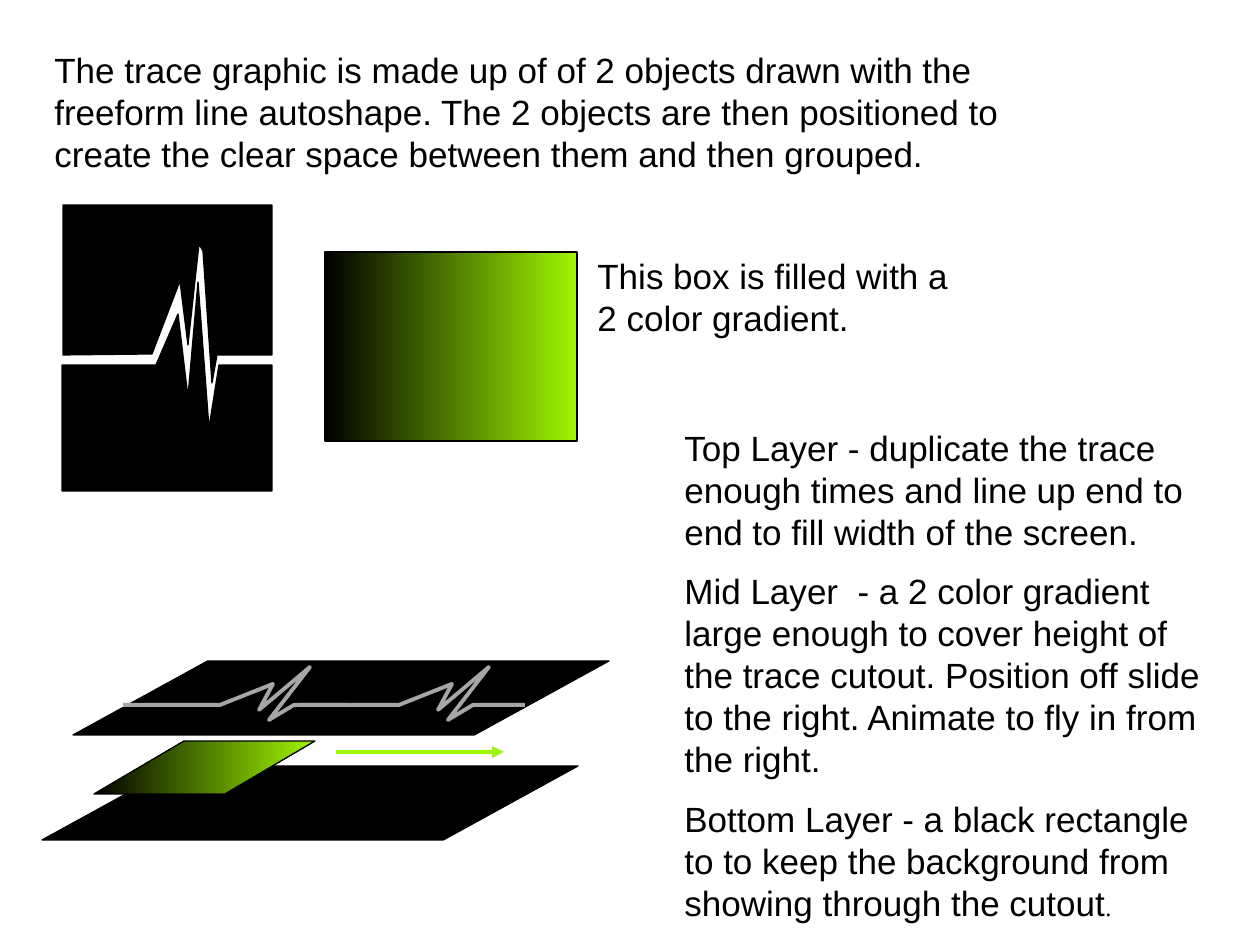
from dataclasses import dataclass

from lxml import etree
from pptx import Presentation
from pptx import util as u
from pptx.dml.color import RGBColor
from pptx.enum import shapes, text
from pptx.oxml.ns import qn

SCALE = 914400 / 126  # EMU in one px
WIDE, HIGH = 1260, 945


def px(n):
    return u.Emu(round(n * SCALE))


@dataclass(frozen=True)
class Theme:
    black: RGBColor = RGBColor.from_string("000000")
    lime: RGBColor = RGBColor.from_string("9FF602")
    grey: RGBColor = RGBColor.from_string("A6A6A6")
    font: str = "Arial"
    serif: str = "Times New Roman"
    body: int = 20
    small: int = 14
    lead: int = 24
    gap: int = 10
    thin: float = 0.75
    thick: float = 2.25


class Page:
    """Draws on one slide in one style."""

    def __init__(self, slide, theme):
        self.slide = slide
        self.theme = theme

    def edge(self, item, color, width):
        item.line.color.rgb = color
        item.line.width = u.Pt(width)

    def solid(self, item):
        item.shadow.inherit = False
        item.fill.solid()
        item.fill.fore_color.rgb = self.theme.black
        self.edge(item, self.theme.black, self.theme.thin)

    def blend(self, item):
        """Fill from black at the left to lime at the right."""
        self.solid(item)
        item.fill.gradient()
        item.fill.gradient_angle = 0
        ends = (self.theme.black, self.theme.lime)
        for stop, color in zip(item.fill.gradient_stops, ends):
            stop.color.rgb = color

    def box(self, kind, x, y, w, h, slant=None, glow=False):
        item = self.slide.shapes.add_shape(kind, px(x), px(y), px(w), px(h))
        if slant is not None:
            item.adjustments[0] = slant
        if glow:
            self.blend(item)
        else:
            self.solid(item)

    def form(self, spots, close):
        pen = self.slide.shapes.build_freeform(*spots[0], scale=SCALE)
        pen.add_line_segments(spots[1:], close=close)
        return pen.convert_to_shape()

    def block(self, spots):
        self.solid(self.form(spots, True))

    def trace(self, spots):
        item = self.form(spots, False)
        item.shadow.inherit = False
        item.fill.background()
        self.edge(item, self.theme.grey, self.theme.thick)

    def arrow(self, x, y, end):
        item = self.slide.shapes.add_connector(
            shapes.MSO_CONNECTOR.STRAIGHT, px(x), px(y), px(end), px(y))
        self.edge(item, self.theme.lime, self.theme.thick)
        props = item._element.spPr
        etree.SubElement(props.find(qn("a:ln")), qn("a:tailEnd"), type="triangle")
        etree.SubElement(props, qn("a:effectLst"))

    def style(self, run, font, size):
        run.font.name = font
        run.font.size = u.Pt(size)
        run.font.color.rgb = self.theme.black

    def note(self, x, y, w, h, *lines):
        """Add a text box and return its last paragraph."""
        frame = self.slide.shapes.add_textbox(px(x), px(y), px(w), px(h)).text_frame
        frame.word_wrap = True
        frame.auto_size = text.MSO_AUTO_SIZE.SHAPE_TO_FIT_TEXT
        frame.text = "\n".join(lines)
        for n, para in enumerate(frame.paragraphs):
            para.line_spacing = u.Pt(self.theme.lead)
            if n:
                para.space_before = u.Pt(self.theme.gap)
            for run in para.runs:
                self.style(run, self.theme.font, self.theme.body)
        return para

    def tail(self, para, words):
        """End a paragraph in the small serif type."""
        run = para.add_run()
        run.text = words
        self.style(run, self.theme.serif, self.theme.small)


UPPER = [(63, 355), (152, 354), (180, 281), (188, 345), (199, 244), (203, 251),
         (212, 383), (217, 355), (272, 355), (272, 205), (63, 205)]
LOWER = [(62, 365), (156, 365), (178, 314), (188, 397), (198, 282), (209, 428),
         (219, 365), (272, 365), (272, 491), (62, 491)]
PULSE = [(123, 705), (220, 705), (273, 684), (259, 710), (310, 667), (269, 720),
         (294, 705), (346, 705)]
STEP = 179  # from one pulse to the next


def main():
    deck = Presentation()
    deck.slide_width, deck.slide_height = px(WIDE), px(HIGH)
    page = Page(deck.slides.add_slide(deck.slide_layouts[6]), Theme())
    rect = shapes.MSO_SHAPE.RECTANGLE
    sheet = shapes.MSO_SHAPE.PARALLELOGRAM

    page.box(rect, 325, 252, 252, 189, glow=True)
    page.block(LOWER)
    page.block(UPPER)

    page.box(sheet, 73, 661, 536, 74, slant=1.82)
    for n in range(2):
        page.trace([(x + n * STEP, y) for x, y in PULSE])
    page.box(sheet, 42, 766, 536, 74, slant=1.82)
    page.box(sheet, 94, 741, 221, 53, slant=1.7, glow=True)
    page.arrow(336, 752, 504)

    last = page.note(
        672, 420, 557, 522,
        "Top Layer - duplicate the trace enough times and line up end to end "
        "to fill width of the screen.",
        "Mid Layer  - a 2 color gradient large enough to cover height of the "
        "trace cutout. Position off slide to the right. Animate to fly in from "
        "the right.",
        "Bottom Layer - a black rectangle to to keep the background from "
        "showing through the cutout")
    page.tail(last, ".")
    page.note(
        42, 42, 998, 140,
        "The trace graphic is made up of of 2 objects drawn with the freeform "
        "line autoshape. The 2 objects are then positioned to create the clear "
        "space between them and then grouped.")
    page.note(585, 248, 402, 97, "This box is filled with a 2 color gradient.")
    deck.save("out.pptx")


if __name__ == "__main__":
    main()
